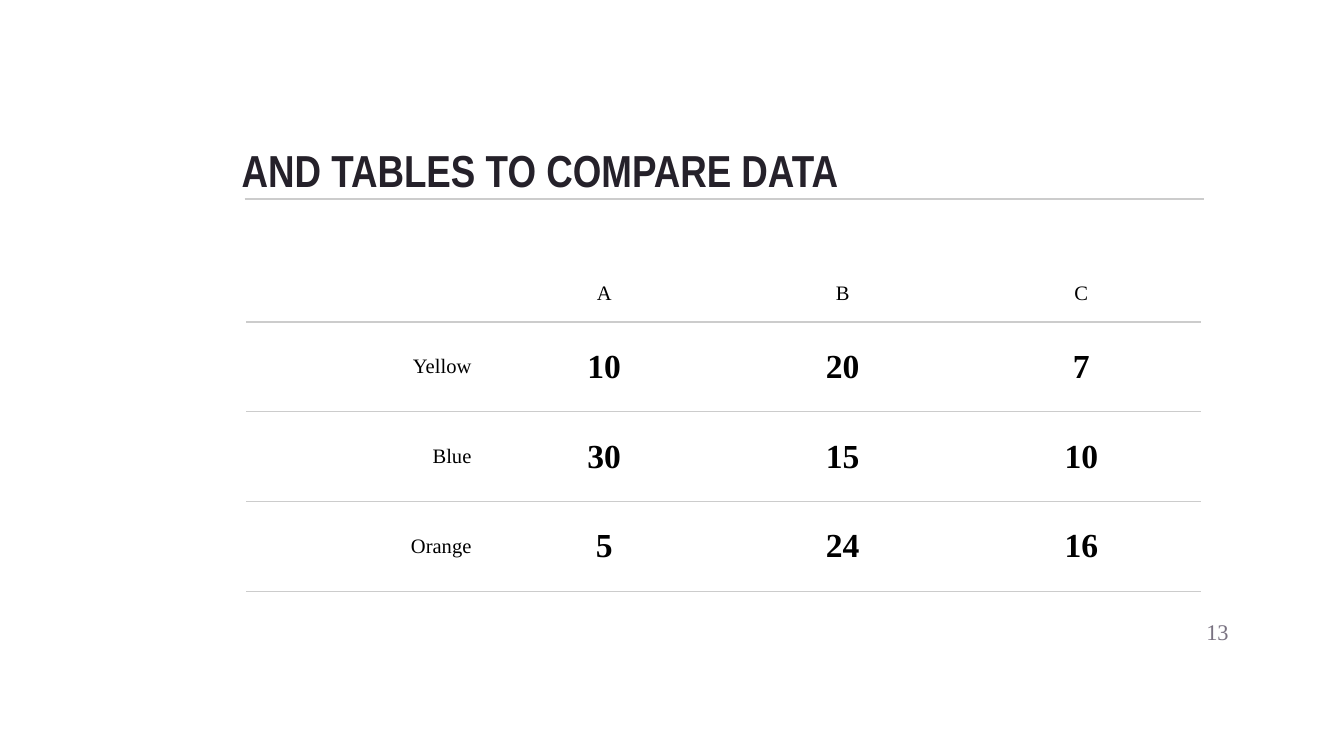
import pptx
import pptx.util
import pptx.dml.color
import pptx.enum.shapes
import pptx.enum.text
import pptx.oxml.ns
from lxml import etree

Pt = pptx.util.Pt
ALIGN = pptx.enum.text.PP_ALIGN
ANCHOR = pptx.enum.text.MSO_ANCHOR
qn = pptx.oxml.ns.qn

ROWS = [
    ("", "A", "B", "C"),
    ("Yellow", "10", "20", "7"),
    ("Blue", "30", "15", "10"),
    ("Orange", "5", "24", "16"),
]
TITLE = dict(name="Arial Narrow", size=Pt(24), bold=True)
LABEL = dict(name="Times New Roman", size=Pt(11), bold=False)
VALUE = dict(name="Times New Roman", size=Pt(18), bold=True)
NUMBER = dict(name="Times New Roman", size=Pt(12), bold=False)
TEXTS = [
    ("AND TABLES TO COMPARE DATA", (122.4, 56.9, 521.3, 55.4),
     ANCHOR.BOTTOM, ALIGN.LEFT, TITLE, "25212A"),
    ("13", (622.1, 322.6, 43.2, 31), ANCHOR.MIDDLE, ALIGN.RIGHT, NUMBER, "797281"),
]
RULE = "CCCCCC"
RULE_WIDTH = 0.75
TABLE_LEFT, TABLE_TOP = 132, 141.8
COL_WIDTH, HEADER_HEIGHT, ROW_HEIGHT = 127.8, 30.7, 48.1


def rgb(value):
    return pptx.dml.color.RGBColor.from_string(value)


def write(tf, text, align, fmt, color):
    p = tf.paragraphs[0]
    p.alignment = align
    font = p.font
    if text:
        r = p.add_run()
        r.text = text
        font = r.font
    for key, value in fmt.items():
        setattr(font, key, value)
    font.color.rgb = rgb(color)


def set_borders(cell, ruled):
    tcPr = cell._tc.get_or_add_tcPr()
    for i, side in enumerate(("lnL", "lnR", "lnT", "lnB")):
        ln = etree.Element(qn("a:" + side), w=str(int(Pt(RULE_WIDTH))))
        if side in ruled:
            fill = etree.SubElement(ln, qn("a:solidFill"))
            etree.SubElement(fill, qn("a:srgbClr"), val=RULE)
        else:
            etree.SubElement(ln, qn("a:noFill"))
        tcPr.insert(i, ln)


def add_text(s, text, box, anchor, align, fmt, color):
    tf = s.shapes.add_textbox(*map(Pt, box)).text_frame
    tf.word_wrap = True
    tf.vertical_anchor = anchor
    for side in ("left", "right", "top", "bottom"):
        setattr(tf, "margin_" + side, Pt(7.2))
    write(tf, text, align, fmt, color)


def add_rule(s, x1, x2, y):
    line = s.shapes.add_connector(
        pptx.enum.shapes.MSO_CONNECTOR.STRAIGHT, Pt(x1), Pt(y), Pt(x2), Pt(y))
    line.line.color.rgb = rgb(RULE)
    line.line.width = Pt(RULE_WIDTH)
    etree.SubElement(line._element.spPr, qn("a:effectLst"))


def add_data_table(s):
    heights = [HEADER_HEIGHT] + [ROW_HEIGHT] * (len(ROWS) - 1)
    cols = len(ROWS[0])
    table = s.shapes.add_table(
        len(ROWS), cols, Pt(TABLE_LEFT), Pt(TABLE_TOP),
        Pt(COL_WIDTH * cols), Pt(sum(heights))).table
    table.first_row = table.horz_banding = False
    for col in table.columns:
        col.width = Pt(COL_WIDTH)
    for i, (row, height) in enumerate(zip(ROWS, heights)):
        table.rows[i].height = Pt(height)
        for j, text in enumerate(row):
            cell = table.cell(i, j)
            cell.fill.background()
            cell.vertical_anchor = ANCHOR.MIDDLE
            cell.margin_left = cell.margin_right = Pt(7.2)
            cell.margin_top = cell.margin_bottom = Pt(5)
            write(cell.text_frame, text, ALIGN.CENTER if j else ALIGN.RIGHT,
                  VALUE if i and j else LABEL, "000000")
            set_borders(cell, ("lnT", "lnB") if i else ("lnB",))


def main():
    prs = pptx.Presentation()
    prs.slide_width, prs.slide_height = Pt(720), Pt(405)
    s = prs.slides.add_slide(prs.slide_layouts[6])
    add_rule(s, 131, 645, 106.7)
    for item in TEXTS:
        add_text(s, *item)
    add_data_table(s)
    prs.save("out.pptx")


if __name__ == "__main__":
    main()
